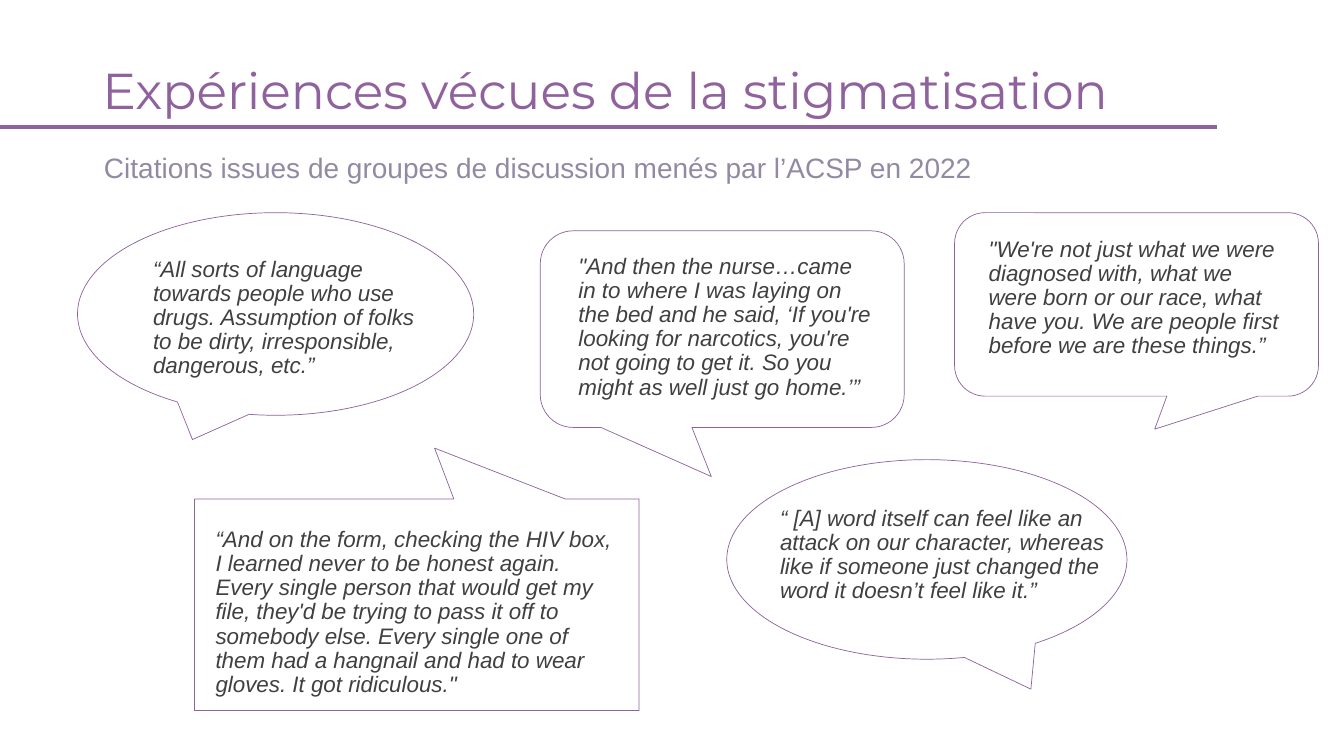
from dataclasses import dataclass

from lxml.etree import SubElement
from pptx import Presentation
from pptx.dml.color import RGBColor
from pptx.enum.shapes import MSO_CONNECTOR, MSO_SHAPE as Shape
from pptx.enum.text import MSO_ANCHOR, MSO_AUTO_SIZE, PP_ALIGN
from pptx.oxml.ns import qn
from pptx.util import Inches, Pt

COLUMNS, ROWS = 80, 45
TITLE_ONLY = 5


@dataclass(frozen=True)
class Theme:
    accent: str = "8F629E"
    muted: str = "928AA2"
    quote: str = "404040"
    paper: str = "FFFFFF"
    heading_font: str = "Montserrat"
    body_font: str = "Arial"
    title_size: float = 36
    subtitle_size: float = 20
    quote_size: float = 16
    outline: float = 0.5
    rule: float = 2.25


class QuoteSlide:
    """Places styled elements on a grid of COLUMNS by ROWS."""

    def __init__(self, deck, theme):
        self.theme = theme
        self.column = deck.slide_width / COLUMNS
        self.row = deck.slide_height / ROWS
        self.slide = deck.slides.add_slide(deck.slide_layouts[TITLE_ONLY])

    def place(self, left, top, width, height):
        return (round(left * self.column), round(top * self.row),
                round(width * self.column), round(height * self.row))

    def set_text(self, frame, text, font, size, color, italic=False, spacing=None):
        frame.text = text
        frame.word_wrap = True
        frame.auto_size = MSO_AUTO_SIZE.NONE
        paragraph = frame.paragraphs[0]
        paragraph.alignment = PP_ALIGN.LEFT
        paragraph.line_spacing = spacing
        for run in paragraph.runs:
            run.font.name = font
            run.font.size = Pt(size)
            run.font.italic = italic
            run.font.color.rgb = RGBColor.from_string(color)

    def title(self, text, area):
        heading = self.slide.shapes.title
        heading.left, heading.top, heading.width, heading.height = self.place(*area)
        self.set_text(heading.text_frame, text, self.theme.heading_font,
                      self.theme.title_size, self.theme.accent, spacing=0.9)
        heading.text_frame.vertical_anchor = MSO_ANCHOR.MIDDLE

    def subtitle(self, text, area):
        box = self.slide.shapes.add_textbox(*self.place(*area))
        self.set_text(box.text_frame, text, self.theme.body_font,
                      self.theme.subtitle_size, self.theme.muted)

    def bubble(self, kind, area, tail):
        balloon = self.slide.shapes.add_shape(kind, *self.place(*area))
        balloon.shadow.inherit = False
        balloon.fill.solid()
        balloon.fill.fore_color.rgb = RGBColor.from_string(self.theme.paper)
        balloon.line.color.rgb = RGBColor.from_string(self.theme.accent)
        balloon.line.width = Pt(self.theme.outline)
        for index, offset in enumerate(tail):
            balloon.adjustments[index] = offset

    def quote(self, text, area):
        box = self.slide.shapes.add_textbox(*self.place(*area))
        self.set_text(box.text_frame, text, self.theme.body_font,
                      self.theme.quote_size, self.theme.quote, italic=True, spacing=0.9)

    def rule(self, start, end, row):
        x1, y, x2, _ = self.place(start, row, end, 0)
        line = self.slide.shapes.add_connector(MSO_CONNECTOR.STRAIGHT, x1, y, x2, y)
        line.line.color.rgb = RGBColor.from_string(self.theme.accent)
        line.line.width = Pt(self.theme.rule)
        SubElement(line._element.spPr, qn("a:effectLst"))


# Each testimony: bubble kind, bubble area, tail tip, words, words area
TESTIMONIES = [
    (Shape.ROUNDED_RECTANGULAR_CALLOUT, (32.16, 13.74, 21.66, 11.7), (-0.03, 0.75),
     "\"And then the nurse…came in to where I was laying on the bed and he said, "
     "‘If you're looking for narcotics, you're not going to get it. "
     "So you might as well just go home.’”",
     (33.84, 14.88, 18.84, 11.76)),
    (Shape.RECTANGULAR_CALLOUT, (11.58, 29.7, 26.46, 12.6), (0.04, -0.74),
     "“And on the form, checking the HIV box, I learned never to be honest again. "
     "Every single person that would get my file, they'd be trying to pass it off "
     "to somebody else. Every single one of them had a hangnail and had to wear "
     "gloves. It got ridiculous.\"",
     (12.24, 31.14, 25.08, 10.38)),
    (Shape.OVAL_CALLOUT, (4.62, 12.66, 23.58, 12.06), (-0.21, 0.62),
     "“All sorts of language towards people who use drugs. Assumption of folks "
     "to be dirty, irresponsible, dangerous, etc.”",
     (8.52, 15.06, 17.94, 9.6)),
    (Shape.ROUNDED_RECTANGULAR_CALLOUT, (56.82, 12.66, 21.66, 10.92), (0.05, 0.68),
     "\"We're not just what we were diagnosed with, what we were born or our race, "
     "what have you. We are people first before we are these things.”",
     (58.26, 13.86, 18.84, 8.16)),
    (Shape.OVAL_CALLOUT, (43.26, 27.36, 23.82, 11.88), (0.26, 0.65),
     "“ [A] word itself can feel like an attack on our character, whereas like if "
     "someone just changed the word it doesn’t feel like it.”",
     (45.84, 29.88, 20.76, 11.76)),
]


def main():
    deck = Presentation()
    deck.slide_width, deck.slide_height = Inches(13.33), Inches(7.5)
    page = QuoteSlide(deck, Theme())

    # Heading
    page.title("Expériences vécues de la stigmatisation", (5.5, 2.4, 69, 6.3))
    page.subtitle("Citations issues de groupes de discussion menés par l’ACSP en 2022",
                  (5.6, 8.64, 68.9, 2.64))

    # Speech bubbles with their quotes
    for kind, bubble_area, tail, words, words_area in TESTIMONIES:
        page.bubble(kind, bubble_area, tail)
        page.quote(words, words_area)

    # Rule under the title
    page.rule(0, 72.42, 7.56)

    deck.save("out.pptx")


if __name__ == "__main__":
    main()
